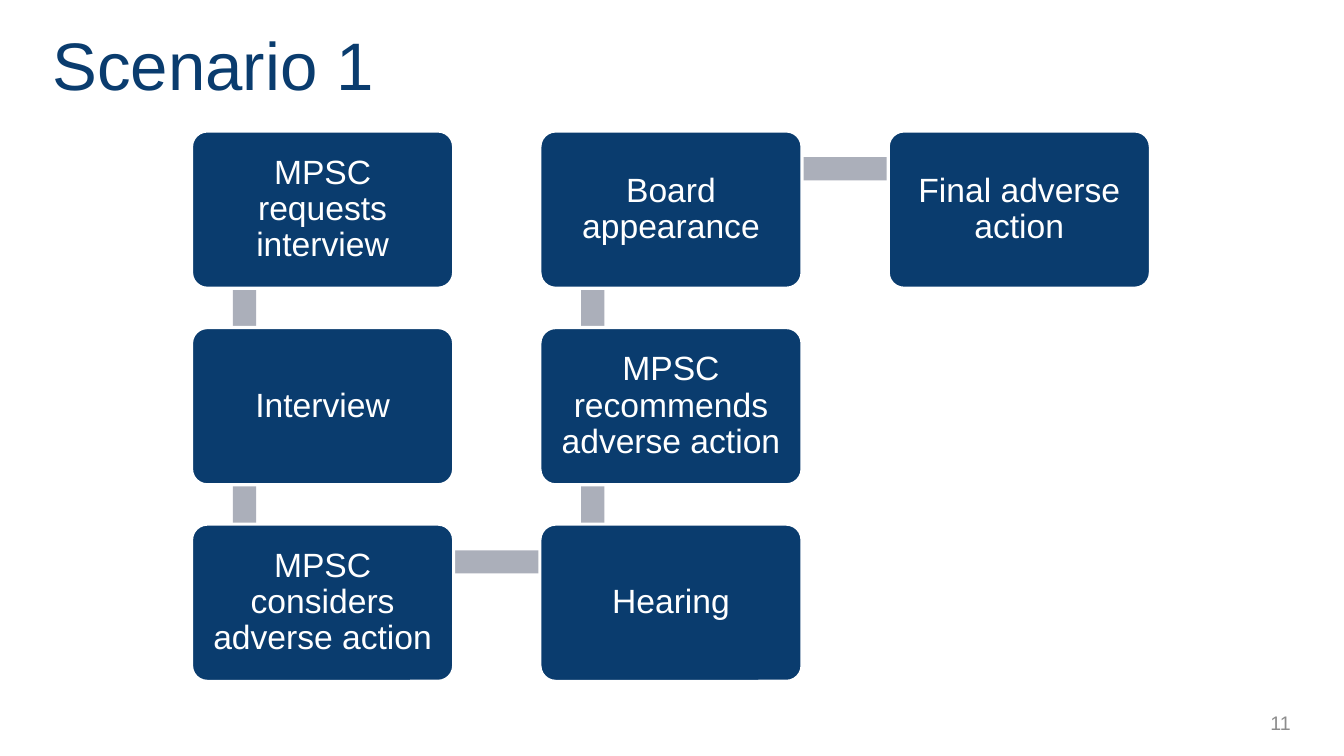
"""Build the Scenario 1 slide: a snaking chain of seven review steps."""
from dataclasses import dataclass
from itertools import pairwise

from pptx import Presentation
from pptx import util as u
from pptx.dml.color import RGBColor
from pptx.enum import shapes, text

NAVY, GREY, WHITE, MUTED = "0A3C6E", "ABAFBA", "FFFFFF", "8C8C8C"
LEFT, TOP = 1.9, 1.3
STEP_X, STEP_Y = 3.455, 1.95
WIDE, HIGH = 2.6, 1.56
THICK = 0.23


@dataclass
class Step:
    label: str
    col: int
    row: int

    @property
    def x(self) -> float:
        return LEFT + self.col * STEP_X

    @property
    def y(self) -> float:
        return TOP + self.row * STEP_Y


STEPS = [
    Step("MPSC requests interview", 0, 0),
    Step("Interview", 0, 1),
    Step("MPSC considers adverse action", 0, 2),
    Step("Hearing", 1, 2),
    Step("MPSC recommends adverse action", 1, 1),
    Step("Board appearance", 1, 0),
    Step("Final adverse action", 2, 0),
]


def color(code: str) -> RGBColor:
    return RGBColor.from_string(code)


def place(item, x: float, y: float, w: float, h: float) -> None:
    spots = {"left": x, "top": y, "width": w, "height": h}
    for name, size in spots.items():
        setattr(item, name, u.Inches(size))


def write(item, words: str, size: int, code: str, align, gap: float = 1) -> None:
    frame = item.text_frame
    frame.text = words
    frame.word_wrap = True
    frame.vertical_anchor = text.MSO_ANCHOR.MIDDLE
    para = frame.paragraphs[0]
    para.alignment = align
    para.line_spacing = gap
    style = {"name": "Arial", "size": u.Pt(size), "bold": False}
    for name, value in style.items():
        setattr(para.font, name, value)
    para.font.color.rgb = color(code)


def block(slide, kind, spot: tuple[float, ...], code: str):
    item = slide.shapes.add_shape(kind, *map(u.Inches, spot))
    item.shadow.inherit = False
    item.fill.solid()
    item.fill.fore_color.rgb = color(code)
    item.line.fill.background()
    return item


def link(slide, start: Step, end: Step) -> None:
    kind = shapes.MSO_SHAPE.RECTANGLE
    if start.row == end.row:
        block(slide, kind, (start.x + 0.53, start.y + 0.26, STEP_X, THICK), GREY)
        return
    upper = min(start.y, end.y)
    bar = block(slide, kind, (start.x - 0.45, upper + 1.24, STEP_Y, THICK), GREY)
    bar.rotation = 90 if end.row > start.row else 270


def box(slide, step: Step) -> None:
    kind = shapes.MSO_SHAPE.ROUNDED_RECTANGLE
    item = block(slide, kind, (step.x, step.y, WIDE, HIGH), NAVY)
    item.adjustments[0] = 0.1
    item.line.color.rgb = color(WHITE)
    item.line.width = u.Pt(2.25)
    for side in ("left", "top", "right", "bottom"):
        setattr(item.text_frame, f"margin_{side}", u.Inches(0.1))
    write(item, step.label, 24, WHITE, text.PP_ALIGN.CENTER, 0.9)


def main() -> None:
    deck = Presentation()
    deck.slide_width, deck.slide_height = u.Inches(13.33), u.Inches(7.5)
    slide = deck.slides.add_slide(deck.slide_layouts[5])
    title = slide.shapes.title
    place(title, 0.42, 0.17, 12.74, 0.93)
    write(title, "Scenario 1", 48, NAVY, text.PP_ALIGN.LEFT)
    for start, end in pairwise(STEPS):
        link(slide, start, end)
    for step in STEPS:
        box(slide, step)
    page = slide.shapes.add_textbox(*map(u.Inches, (10.64, 6.97, 2.26, 0.4)))
    write(page, "11", 14, MUTED, text.PP_ALIGN.RIGHT)
    deck.save("out.pptx")


if __name__ == "__main__":
    main()
